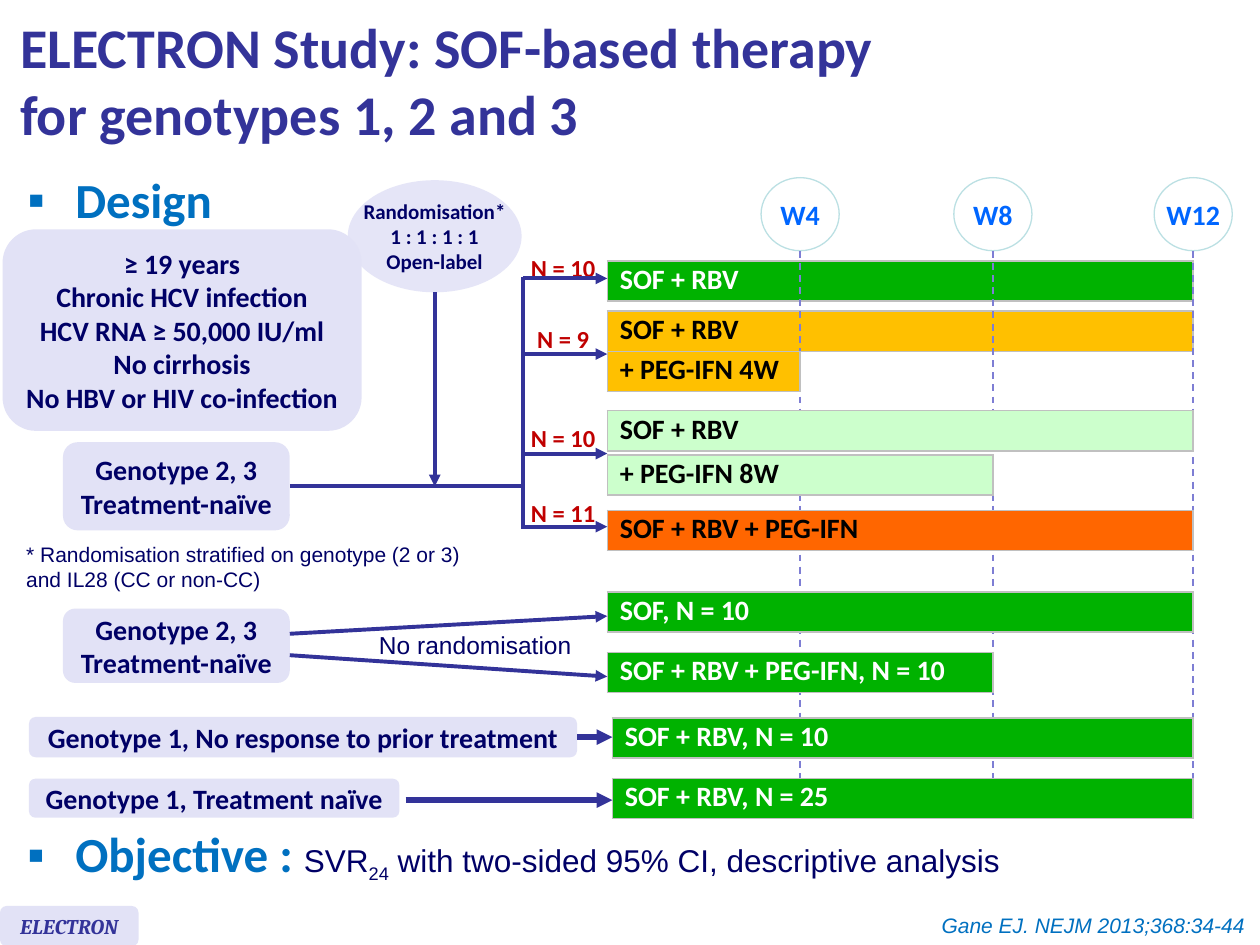
"""Build the ELECTRON study design slide."""
from pptx import Presentation
from pptx.dml.color import RGBColor
from pptx.enum.dml import MSO_LINE
from pptx.enum.shapes import MSO_CONNECTOR, MSO_SHAPE
from pptx.enum.text import MSO_ANCHOR, MSO_AUTO_SIZE, PP_ALIGN
from pptx.oxml import parse_xml
from pptx.oxml.ns import nsdecls
from pptx.util import Inches, Pt

STRAIGHT = MSO_CONNECTOR.STRAIGHT
OVAL, ROUNDED = MSO_SHAPE.OVAL, MSO_SHAPE.ROUNDED_RECTANGLE
LEFT, CENTER, RIGHT = PP_ALIGN.LEFT, PP_ALIGN.CENTER, PP_ALIGN.RIGHT
MIDDLE, TOP = MSO_ANCHOR.MIDDLE, MSO_ANCHOR.TOP
DASH = MSO_LINE.DASH
FIXED = MSO_AUTO_SIZE.NONE
RIGHT_SIDE = 3

INDIGO = RGBColor(0x33, 0x33, 0x99)
NAVY = RGBColor(0x00, 0x00, 0x66)
BLUE = RGBColor(0x00, 0x70, 0xC0)
WEEK_BLUE = RGBColor(0x00, 0x66, 0xFF)
WEEK_OUTLINE = RGBColor(0xBB, 0xE0, 0xE3)
DASH_VIOLET = RGBColor(0x7E, 0x7E, 0xD4)
LAVENDER = RGBColor(0xE2, 0xE2, 0xF6)
PALE_LAVENDER = RGBColor(0xE5, 0xE5, 0xF7)
RED = RGBColor(0xC0, 0x00, 0x00)
GREEN = RGBColor(0x00, 0xB2, 0x00)
AMBER = RGBColor(0xFF, 0xC0, 0x00)
MINT = RGBColor(0xCC, 0xFF, 0xCC)
ORANGE = RGBColor(0xFF, 0x66, 0x00)
WHITE = RGBColor(0xFF, 0xFF, 0xFF)
BLACK = RGBColor(0x00, 0x00, 0x00)


def write(frame, lines, size, color, align=CENTER, name="Calibri", bold=True,
          italic=False, anchor=MIDDLE, wrap=False):
    frame.auto_size = FIXED
    frame.word_wrap = wrap
    frame.vertical_anchor = anchor
    for index, line in enumerate(lines):
        paragraph = frame.add_paragraph() if index else frame.paragraphs[0]
        paragraph.alignment = align
        run = paragraph.add_run()
        run.text = line
        font = run.font
        font.name, font.size, font.bold, font.italic = name, Pt(size), bold, italic
        font.color.rgb = color


def draw_line(start, end, color, width, arrow=False, source=None):
    connector = slide.shapes.add_connector(
        STRAIGHT, *(Inches(value) for value in (*start, *end)))
    if source is not None:
        connector.begin_connect(source, RIGHT_SIDE)
    connector.line.color.rgb = color
    connector.line.width = Pt(width)
    if arrow:
        connector.line._get_or_add_ln().append(
            parse_xml(f'<a:tailEnd {nsdecls("a")} type="triangle"/>'))
    connector._element.spPr.append(parse_xml(f'<a:effectLst {nsdecls("a")}/>'))
    return connector


presentation = Presentation()
presentation.slide_width = Inches(10)
presentation.slide_height = Inches(7.5)
slide = presentation.slides.add_slide(presentation.slide_layouts[5])

title = slide.shapes.title
title.left, title.top = Inches(0.06), Inches(0.03)
title.width, title.height = Inches(9.83), Inches(1.21)
write(title.text_frame, ["ELECTRON Study: SOF-based therapy"], 32, INDIGO, LEFT, wrap=True)
title_paragraph = title.text_frame.paragraphs[0]
title_paragraph.add_line_break()
second_line = title_paragraph.add_run()
second_line.text = "for genotypes 1, 2 and 3"
second_line.font.name, second_line.font.size = "Calibri", Pt(32)
second_line.font.bold = True
second_line.font.color.rgb = INDIGO

for text, top, width in (("Design", 1.3, 1.98), ("Objective : ", 6.49, 9.3)):
    heading = slide.shapes.add_textbox(Inches(0.12), Inches(top), Inches(width), Inches(0.63))
    paragraph = heading.text_frame.paragraphs[0]
    properties = paragraph._p.get_or_add_pPr()
    properties.set("marL", str(Inches(0.38)))
    properties.set("indent", str(-Inches(0.38)))
    for element in (f'<a:buClr {nsdecls("a")}><a:srgbClr val="{BLUE}"/></a:buClr>',
                    f'<a:buFont {nsdecls("a")} typeface="Arial"/>',
                    f'<a:buChar {nsdecls("a")} char="▪"/>'):
        properties.append(parse_xml(element))
    write(heading.text_frame, [text], 28, BLUE, LEFT, anchor=TOP, wrap=True)

for text, baseline in (("SVR", 0), ("24", -25000),
                       (" with two-sided 95% CI, descriptive analysis", 0)):
    run = paragraph.add_run()
    run.text = text
    run.font.name, run.font.size, run.font.bold = "Arial", Pt(18), False
    run.font.color.rgb = NAVY
    if baseline:
        run._r.get_or_add_rPr().set("baseline", str(baseline))

BAR_LEFT, WEEK_4, WEEK_8, WEEK_12 = 4.82, 6.35, 7.88, 9.47
bars = []
for text, left, top, right, fill, color in (
        ("SOF + RBV", BAR_LEFT, 2.07, WEEK_12, GREEN, WHITE),
        ("SOF + RBV", BAR_LEFT, 2.47, WEEK_12, AMBER, BLACK),
        ("+ PEG-IFN 4W", BAR_LEFT, 2.79, WEEK_4, AMBER, BLACK),
        ("SOF + RBV", BAR_LEFT, 3.26, WEEK_12, MINT, BLACK),
        ("+ PEG-IFN 8W", BAR_LEFT, 3.61, WEEK_8, MINT, BLACK),
        ("SOF + RBV + PEG-IFN", BAR_LEFT, 4.05, WEEK_12, ORANGE, BLACK),
        ("SOF, N = 10", BAR_LEFT, 4.7, WEEK_12, GREEN, WHITE),
        ("SOF + RBV + PEG-IFN, N = 10", BAR_LEFT, 5.18, WEEK_8, GREEN, WHITE),
        ("SOF + RBV, N = 10", 4.86, 5.7, WEEK_12, GREEN, WHITE),
        ("SOF + RBV, N = 25", 4.86, 6.18, WEEK_12, GREEN, WHITE)):
    bar = slide.shapes.add_table(1, 1, Inches(left), Inches(top),
                                 Inches(right - left), Inches(0.31))
    bar.table.first_row = bar.table.horz_banding = False
    cell = bar.table.cell(0, 0)
    cell.fill.solid()
    cell.fill.fore_color.rgb = fill
    cell.vertical_anchor = MIDDLE
    paragraph = cell.text_frame.paragraphs[0]
    paragraph.line_spacing = 0.8
    run = paragraph.add_run()
    run.text = text
    run.font.name, run.font.size, run.font.bold = "Calibri", Pt(16), True
    run.font.color.rgb = color
    cell_properties = cell._tc.get_or_add_tcPr()
    for position, side in enumerate(("lnL", "lnR", "lnT", "lnB")):
        border = parse_xml(
            f'<a:{side} {nsdecls("a")} w="{Pt(1)}"><a:solidFill>'
            f'<a:srgbClr val="C0C0C0"/></a:solidFill></a:{side}>')
        cell_properties.insert(position, border)
    bars.append(bar)

boxes = {}
for key, kind, lines, left, top, width, height, fill, size in (
        ("randomisation", OVAL, ["Randomisation*", "1 : 1 : 1 : 1", "Open-label"],
         2.76, 1.43, 1.38, 0.89, PALE_LAVENDER, 12),
        ("criteria", ROUNDED,
         ["≥ 19 years", "Chronic HCV infection", "HCV RNA ≥ 50,000 IU/ml",
          "No cirrhosis", "No HBV or HIV co-infection"],
         0.02, 1.82, 2.85, 1.6, LAVENDER, 16),
        ("randomised", ROUNDED, ["Genotype 2, 3", "Treatment-naïve"],
         0.5, 3.51, 1.8, 0.7, LAVENDER, 16),
        ("not randomised", ROUNDED, ["Genotype 2, 3", "Treatment-naïve"],
         0.5, 4.83, 1.8, 0.59, LAVENDER, 16),
        ("no response", ROUNDED, ["Genotype 1, No response to prior treatment"],
         0.23, 5.69, 4.35, 0.32, LAVENDER, 16),
        ("naïve", ROUNDED, ["Genotype 1, Treatment naïve"],
         0.23, 6.18, 2.94, 0.31, LAVENDER, 16),
        ("study", ROUNDED, ["ELECTRON"], 0, 7.19, 1.1, 0.32, LAVENDER, 12),
        ("W4", OVAL, ["W4"], WEEK_4 - 0.31, 1.41, 0.62, 0.58, WHITE, 16),
        ("W8", OVAL, ["W8"], WEEK_8 - 0.31, 1.41, 0.62, 0.58, WHITE, 16),
        ("W12", OVAL, ["W12"], WEEK_12 - 0.31, 1.41, 0.62, 0.58, WHITE, 16)):
    shape = slide.shapes.add_shape(kind, Inches(left), Inches(top), Inches(width), Inches(height))
    shape.shadow.inherit = False
    shape.fill.solid()
    shape.fill.fore_color.rgb = fill
    shape.line.fill.background()
    is_week, is_study = fill == WHITE, key == "study"
    if is_week:
        shape.line.color.rgb = WEEK_OUTLINE
        shape.line.width = Pt(0.75)
    write(shape.text_frame, lines, size,
          WEEK_BLUE if is_week else INDIGO if is_study else NAVY,
          name="Cambria" if is_study else "Calibri", italic=is_study)
    boxes[key] = shape

for x, bottom in ((WEEK_4, 6.39), (WEEK_8, 6.39), (WEEK_12, 6.49)):
    guide = draw_line((x, 1.99), (x, bottom), DASH_VIOLET, 1)
    guide.line.dash_style = DASH
for bar in bars[2:]:
    slide.shapes.element.append(bar.element)

for lines, left, top, width, height, size, color, align, name, bold, italic in (
        (["* Randomisation stratified on genotype (2 or 3)", "and IL28 (CC or non-CC)"],
         0.11, 4.25, 3.67, 0.5, 12, NAVY, LEFT, "Arial", False, False),
        (["No randomisation"], 2.91, 4.95, 1.74, 0.34, 14, NAVY, LEFT, "Arial", False, False),
        (["N = 10"], 4.11, 1.96, 0.72, 0.34, 14, RED, CENTER, "Calibri", True, False),
        (["N = 9"], 4.11, 2.52, 0.72, 0.34, 14, RED, CENTER, "Calibri", True, False),
        (["N = 10"], 4.11, 3.31, 0.72, 0.34, 14, RED, CENTER, "Calibri", True, False),
        (["N = 11"], 4.11, 3.9, 0.72, 0.34, 14, RED, CENTER, "Calibri", True, False),
        (["Gane EJ. NEJM 2013;368:34-44"],
         6.17, 7.19, 3.81, 0.3, 12, BLUE, RIGHT, "Arial", False, True)):
    label = slide.shapes.add_textbox(Inches(left), Inches(top), Inches(width), Inches(height))
    write(label.text_frame, lines, size, color, align, name, bold, italic, TOP, align == RIGHT)

TRUNK = 4.15
draw_line((3.45, 2.32), (3.45, 3.86), INDIGO, 2.25, True)
draw_line((2.3, 3.86), (TRUNK, 3.86), INDIGO, 2.25, source=boxes["randomised"])
draw_line((TRUNK, 2.2), (TRUNK, 4.2), INDIGO, 2.25)
for y in (2.21, 2.81, 3.6, 4.18):
    draw_line((TRUNK, y), (BAR_LEFT, y), INDIGO, 2.25, True)
draw_line((2.3, 5.03), (BAR_LEFT, 4.89), INDIGO, 2.25, True)
draw_line((2.3, 5.2), (BAR_LEFT, 5.37), INDIGO, 2.25, True)
draw_line((4.58, 5.85), (4.86, 5.85), INDIGO, 3, True, boxes["no response"])
draw_line((3.22, 6.35), (4.86, 6.35), INDIGO, 3, True)

presentation.save("out.pptx")
